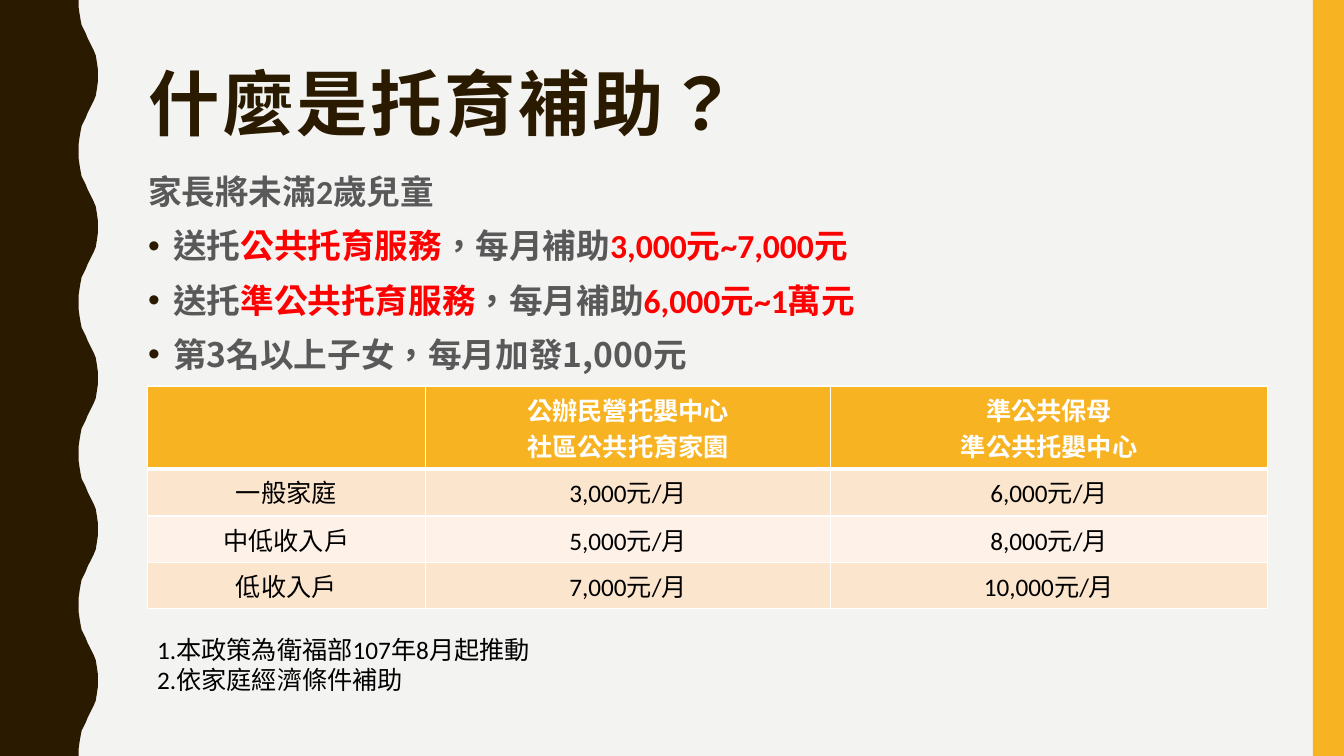
from dataclasses import dataclass

from lxml.etree import SubElement
from pptx import Presentation
from pptx.dml.color import RGBColor
from pptx.enum.shapes import MSO_SHAPE
from pptx.enum.text import MSO_ANCHOR, PP_ALIGN
from pptx.oxml.ns import qn
from pptx.util import Inches, Pt

DARK, GOLD, GREY, RED = "2A1A00", "F8B323", "595959", "FF0000"
BLACK, WHITE, PAPER = "000000", "FFFFFF", "F3F3F2"
BAND_DEEP, BAND_PALE = "FCE5CD", "FEF2E8"
LATIN, CJK = "Calibri", "Noto Sans CJK SC"


@dataclass
class Piece:
    text: str
    color: str


@dataclass
class Line:
    pieces: list[Piece]
    bullet: bool = False
    font: str = LATIN


BODY = [
    Line([Piece("家長將未滿2歲兒童", GREY)]),
    Line([Piece("送托", GREY), Piece("公共托育服務", RED),
          Piece("，每月補助", GREY), Piece("3,000元~7,000元", RED)], True),
    Line([Piece("送托", GREY), Piece("準公共托育服務", RED),
          Piece("，每月補助", GREY), Piece("6,000元~1萬元", RED)], True),
    Line([Piece("第3名以上子女，每月加發1,000元", GREY)], True, CJK),
]
SUBSIDIES = [
    ["", "公辦民營托嬰中心\n社區公共托育家園", "準公共保母\n準公共托嬰中心"],
    ["一般家庭", "3,000元/月", "6,000元/月"],
    ["中低收入戶", "5,000元/月", "8,000元/月"],
    ["低收入戶", "7,000元/月", "10,000元/月"],
]
COLUMN_WIDTHS = [2.76, 4.02, 4.33]
ROW_HEIGHTS = [0.82, 0.47, 0.46, 0.46]
NOTES = ["1.本政策為衛福部107年8月起推動", "2.依家庭經濟條件補助"]

# Left edge in hundredths of an inch: half a wave, mirrored and repeated
WAVE_PERIOD, WAVE_COUNT = 150, 5
HALF_WAVE = [(78, 0), (78, 7), (79, 14), (80, 20), (81, 25), (83, 29), (85, 33), (87, 38),
             (89, 42), (91, 46), (93, 50), (95, 55), (96, 61), (97, 68), (97, 75)]


def rgb(value: str) -> RGBColor:
    return RGBColor.from_string(value)


def set_format(target, values: dict) -> None:
    for name, value in values.items():
        setattr(target, name, value)


def paint(shape, color: str) -> None:
    shape.shadow.inherit = False
    shape.fill.solid()
    shape.fill.fore_color.rgb = rgb(color)
    shape.line.fill.background()


def add_run(paragraph, text: str, size: float, color: str, font: str = LATIN,
            bold: bool = False, east_asian: str = ""):
    run = paragraph.add_run()
    run.text = text
    set_format(run.font, {"size": Pt(size), "name": font, "bold": bold})
    run.font.color.rgb = rgb(color)
    properties = run._r.get_or_add_rPr()
    properties.set("lang", "zh-TW")
    properties.set("altLang", "en-US")
    if east_asian:
        SubElement(properties, qn("a:ea"), typeface=east_asian)
    return run


def add_frame(slide, left: float, top: float, width: float, height: float,
              anchor=MSO_ANCHOR.TOP):
    box = slide.shapes.add_textbox(Inches(left), Inches(top), Inches(width), Inches(height))
    set_format(box.text_frame, {"word_wrap": True, "vertical_anchor": anchor})
    return box.text_frame


def next_paragraph(frame, index: int):
    return frame.add_paragraph() if index else frame.paragraphs[0]


def add_bullet(paragraph) -> None:
    properties = paragraph._p.get_or_add_pPr()
    properties.set("marL", str(Inches(0.25)))
    properties.set("indent", str(-Inches(0.25)))
    color = SubElement(properties, qn("a:buClr"))
    SubElement(color, qn("a:srgbClr"), val=DARK)
    SubElement(properties, qn("a:buFont"), typeface="Arial")
    SubElement(properties, qn("a:buChar"), char="•")


def add_borders(cell, top: float, bottom: float) -> None:
    properties = cell._tc.get_or_add_tcPr()
    for side, width in {"lnL": 1, "lnR": 1, "lnT": top, "lnB": bottom}.items():
        line = SubElement(properties, qn(f"a:{side}"), w=str(Pt(width)))
        fill = SubElement(line, qn("a:solidFill"))
        SubElement(fill, qn("a:srgbClr"), val=WHITE)


def add_decoration(slide) -> None:
    edge = []
    for wave in range(WAVE_COUNT):
        start = wave * WAVE_PERIOD
        edge += [(x, start + y) for x, y in HALF_WAVE]
        edge += [(x, start + WAVE_PERIOD - y) for x, y in HALF_WAVE[-2::-1]]
    outline = slide.shapes.build_freeform(0, 0, scale=Inches(0.01))
    outline.add_line_segments(edge + [(0, WAVE_COUNT * WAVE_PERIOD)], close=True)
    paint(outline.convert_to_shape(), DARK)
    gold_strip = slide.shapes.add_shape(
        MSO_SHAPE.RECTANGLE, Inches(13.02), 0, Inches(0.31), Inches(7.5))
    paint(gold_strip, GOLD)


def add_body(slide) -> None:
    frame = add_frame(slide, 1.37, 1.61, 10.6, 3.63)
    for index, line in enumerate(BODY):
        paragraph = next_paragraph(frame, index)
        set_format(paragraph, {"line_spacing": 1.1, "space_before": Pt(7 if index else 0)})
        if line.bullet:
            add_bullet(paragraph)
        for piece in line.pieces:
            add_run(paragraph, piece.text, 24, piece.color, line.font, bold=True)


def add_subsidy_table(slide) -> None:
    table = slide.shapes.add_table(
        len(ROW_HEIGHTS), len(COLUMN_WIDTHS), Inches(1.46), Inches(3.83),
        Inches(sum(COLUMN_WIDTHS)), Inches(sum(ROW_HEIGHTS))).table
    for column, width in zip(table.columns, COLUMN_WIDTHS):
        column.width = Inches(width)
    for row, height in zip(table.rows, ROW_HEIGHTS):
        row.height = Inches(height)
    for r, texts in enumerate(SUBSIDIES):
        header = r == 0
        fill = GOLD if header else BAND_DEEP if r % 2 else BAND_PALE
        for c, text in enumerate(texts):
            cell = table.cell(r, c)
            add_borders(cell, 3 if r == 1 else 1, 3 if header else 1)
            cell.fill.solid()
            cell.fill.fore_color.rgb = rgb(fill)
            if not text:
                continue
            for index, part in enumerate(text.split("\n")):
                paragraph = next_paragraph(cell.text_frame, index)
                paragraph.alignment = PP_ALIGN.CENTER
                add_run(paragraph, part, 18, WHITE if header else BLACK,
                        bold=header, east_asian=CJK)


def main() -> None:
    deck = Presentation()
    set_format(deck, {"slide_width": Inches(13.33), "slide_height": Inches(7.5)})
    slide = deck.slides.add_slide(deck.slide_layouts[6])
    slide.background.fill.solid()
    slide.background.fill.fore_color.rgb = rgb(PAPER)
    add_decoration(slide)

    # Title
    title = add_frame(slide, 1.37, 0.62, 11.13, 0.89, MSO_ANCHOR.MIDDLE).paragraphs[0]
    title.line_spacing = 0.9
    heading = add_run(title, "什麼是托育補助？", 51, DARK, CJK, True, CJK)
    heading._r.get_or_add_rPr().set("spc", "200")

    add_body(slide)
    add_subsidy_table(slide)

    # Notes under the table
    notes = add_frame(slide, 1.46, 6.24, 6.41, 0.71)
    for index, note in enumerate(NOTES):
        add_run(next_paragraph(notes, index), note, 18, BLACK)

    deck.save("out.pptx")


if __name__ == "__main__":
    main()
